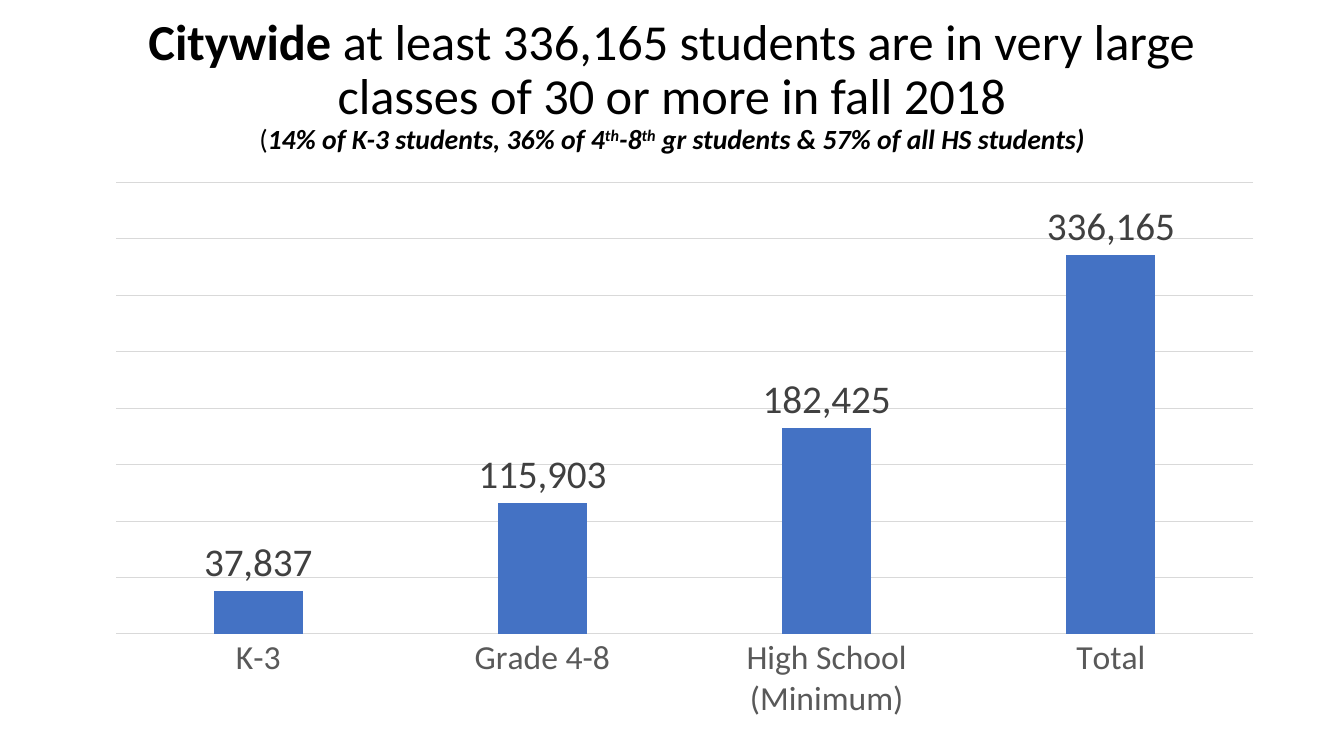
from dataclasses import dataclass

import pptx
import pptx.chart.data
import pptx.dml.color
import pptx.enum.chart
import pptx.enum.text
import pptx.oxml
import pptx.oxml.ns
import pptx.util

Pt = pptx.util.Pt
RGBColor = pptx.dml.color.RGBColor

BLACK = RGBColor(0x00, 0x00, 0x00)
BLUE = RGBColor(0x44, 0x72, 0xC4)
GRID_GREY = RGBColor(0xD9, 0xD9, 0xD9)
AXIS_GREY = RGBColor(0x59, 0x59, 0x59)
LABEL_GREY = RGBColor(0x40, 0x40, 0x40)
FONT = "Calibri"


@dataclass(frozen=True)
class TitleRun:
    text: str
    size: float
    bold: bool = False
    italic: bool = False
    superscript: bool = False


@dataclass(frozen=True)
class ClassGroup:
    name: str
    students: int


def note(text: str, superscript: bool = False) -> TitleRun:
    return TitleRun(text, 19.8, bold=True, italic=True, superscript=superscript)


TITLE_LINES = [
    [
        TitleRun("Citywide", 36, bold=True),
        TitleRun(" at least 336,165 students are in very large classes"
                 " of 30 or more in fall 2018", 36),
    ],
    [
        TitleRun("(", 19.8),
        note("14% of K-3 students, 36% of 4"),
        note("th", superscript=True),
        note("-8"),
        note("th", superscript=True),
        note(" gr students & 57% of all HS students)"),
    ],
]

GROUPS = [
    ClassGroup("K-3", 37837),
    ClassGroup("Grade 4-8", 115903),
    ClassGroup("High School (Minimum)", 182425),
    ClassGroup("Total", 336165),
]


def style_font(font, size: float, color: RGBColor) -> None:
    font.name = FONT
    font.size = Pt(size)
    font.color.rgb = color


def style_line(line) -> None:
    line.color.rgb = GRID_GREY
    line.width = Pt(0.75)


def add_run(p, item: TitleRun) -> None:
    r = p.add_run()
    r.text = item.text
    r.font.size = Pt(item.size)
    r.font.bold = item.bold
    r.font.italic = item.italic
    if item.superscript:
        r.font._element.set("baseline", "30000")


def add_title(slide) -> None:
    sp = slide.shapes.add_textbox(Pt(66), Pt(28.75), Pt(828), Pt(104.4))
    tf = sp.text_frame
    tf.word_wrap = True
    tf.vertical_anchor = pptx.enum.text.MSO_ANCHOR.MIDDLE
    tf.margin_bottom = Pt(42.5)  # lifts the title above the chart
    p = tf.paragraphs[0]
    p.alignment = pptx.enum.text.PP_ALIGN.CENTER
    p.line_spacing = 0.9
    p.font.name = FONT
    p.font.color.rgb = BLACK
    for i, line in enumerate(TITLE_LINES):
        if i:
            p.add_line_break()
        for item in line:
            add_run(p, item)


def set_plot_layout(chart, x: float, y: float, w: float, h: float) -> None:
    """Fix the inner plot area, in fractions of the chart."""
    plot_area = chart._chartSpace.chart.plotArea
    for old in plot_area.findall(pptx.oxml.ns.qn("c:layout")):
        plot_area.remove(old)
    sizes = "".join(f'<c:{key} val="{value}"/>'
                    for key, value in zip("xywh", (x, y, w, h)))
    plot_area.insert(0, pptx.oxml.parse_xml(
        f'<c:layout {pptx.oxml.ns.nsdecls("c")}><c:manualLayout>'
        '<c:layoutTarget val="inner"/>'
        '<c:xMode val="edge"/><c:yMode val="edge"/>'
        f'{sizes}</c:manualLayout></c:layout>'))


def add_class_chart(slide) -> None:
    xl = pptx.enum.chart
    data = pptx.chart.data.CategoryChartData(number_format="#,##0")
    data.categories = [group.name for group in GROUPS]
    data.add_series("Series 1", [group.students for group in GROUPS])
    chart = slide.shapes.add_chart(
        xl.XL_CHART_TYPE.COLUMN_CLUSTERED,
        Pt(66), Pt(122.4), Pt(846), Pt(398.2), data).chart
    chart.has_legend = False
    chart.has_title = False
    style_font(chart.font, 10, BLACK)
    set_plot_layout(chart, 0.02, 0.02, 0.96, 0.81)

    # Axes
    cat = chart.category_axis
    cat.major_tick_mark = xl.XL_TICK_MARK.NONE
    style_font(cat.tick_labels.font, 24, AXIS_GREY)
    style_line(cat.format.line)
    val = chart.value_axis
    val.visible = False
    val.minimum_scale, val.maximum_scale = 0, 400000
    val.major_unit = 50000
    style_line(val.major_gridlines.format.line)

    # Columns and their labels
    plot = chart.plots[0]
    plot.gap_width, plot.overlap = 219, -27
    plot.vary_by_categories = False
    series = plot.series[0]
    series.format.fill.solid()
    series.format.fill.fore_color.rgb = BLUE
    labels = series.data_labels
    labels.show_value = True
    labels.position = xl.XL_LABEL_POSITION.OUTSIDE_END
    labels.number_format = "#,##0"
    labels.number_format_is_linked = False
    style_font(labels.font, 28, LABEL_GREY)


def main() -> None:
    prs = pptx.Presentation()
    prs.slide_width, prs.slide_height = Pt(960), Pt(540)
    slide = prs.slides.add_slide(prs.slide_layouts[6])
    add_title(slide)
    add_class_chart(slide)
    prs.save("out.pptx")


if __name__ == "__main__":
    main()
